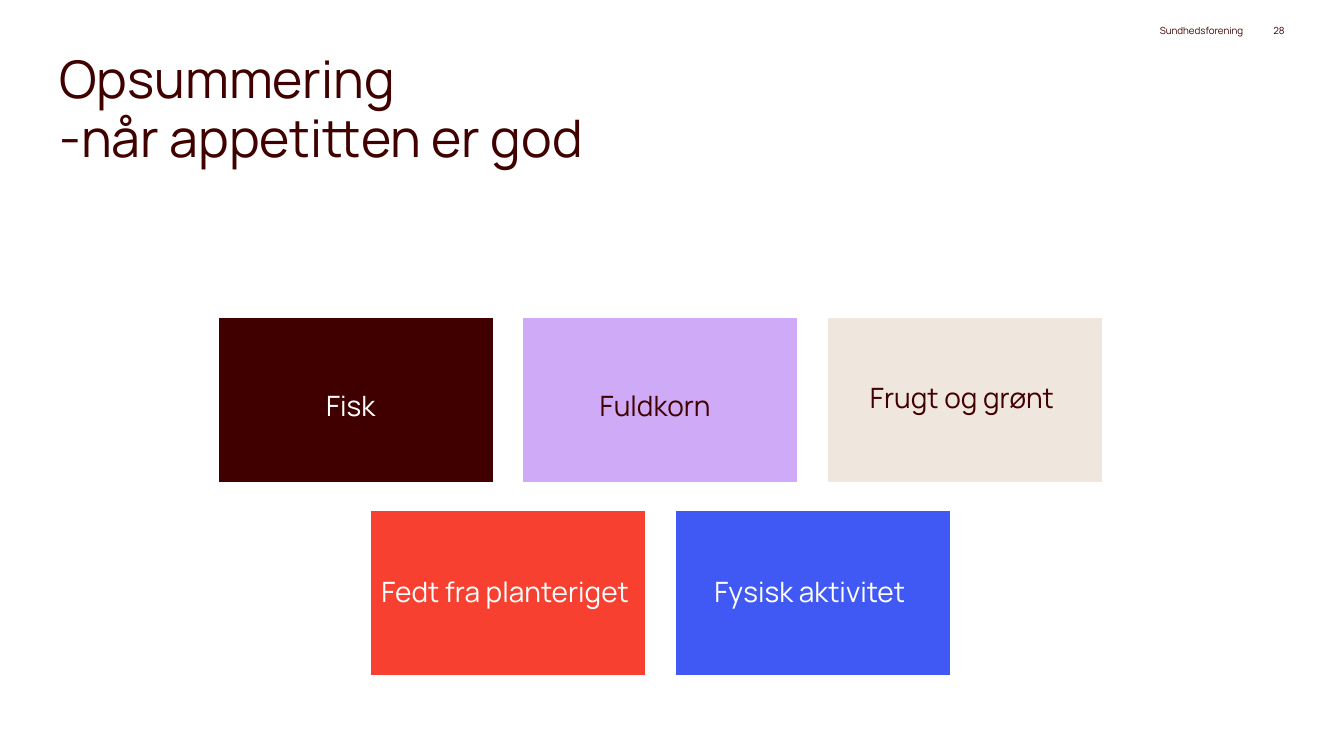
from pptx import Presentation
from pptx.dml.color import RGBColor
from pptx.enum.shapes import MSO_SHAPE as SHAPE
from pptx.enum.text import MSO_ANCHOR as ANCHOR, PP_ALIGN as ALIGN
from pptx.util import Emu, Pt

DARK, WHITE = "400000", "FFFFFF"


def px(n):
    """100 px to the inch."""
    return Emu(n * 9144)


def rgb(value):
    return RGBColor.from_string(value)


class Deck:
    font = "Manrope"

    def __init__(self, width, height):
        self.prs = Presentation()
        self.prs.slide_width, self.prs.slide_height = px(width), px(height)
        self.slide = self.prs.slides.add_slide(self.prs.slide_layouts[6])

    def fill_text(self, sp, lines, align, anchor, spacing=1.0, after=0, inset=0):
        """Each line is a list of (text, size, colour) runs."""
        tf = sp.text_frame
        tf.word_wrap = True
        tf.vertical_anchor = anchor
        tf.margin_left = tf.margin_right = px(inset)
        tf.margin_top = tf.margin_bottom = px(inset)
        p = tf.paragraphs[0]
        p.alignment, p.line_spacing, p.space_after = align, spacing, Pt(after)
        for i, runs in enumerate(lines):
            if i:
                p.add_line_break()
            for text, size, color in runs:
                r = p.add_run()
                r.text = text
                r.font.name, r.font.size = self.font, Pt(size)
                r.font.color.rgb = rgb(color)

    def text(self, x, y, w, h, lines, align=ALIGN.LEFT, anchor=ANCHOR.TOP, **style):
        sp = self.slide.shapes.add_textbox(px(x), px(y), px(w), px(h))
        self.fill_text(sp, lines, align, anchor, **style)

    def box(self, x, y, w, h, fill, runs):
        sp = self.slide.shapes.add_shape(SHAPE.RECTANGLE, px(x), px(y), px(w), px(h))
        sp.shadow.inherit = False
        sp.fill.solid()
        sp.fill.fore_color.rgb = rgb(fill)
        sp.line.color.rgb = rgb(WHITE)
        sp.line.width = Pt(1.5)
        self.fill_text(sp, [runs], ALIGN.CENTER, ANCHOR.MIDDLE,
                       spacing=0.9, after=7, inset=8)


def main():
    deck = Deck(1333, 750)

    # Title
    deck.text(59, 51, 596, 128,
              [[("Opsummering", 37, DARK)], [("-når appetitten er god", 37, DARK)]],
              spacing=0.95)

    # Header: organisation and page number
    for x, w, label in [(677, 556, "Sundhedsforening"), (1235, 39, "28")]:
        deck.text(x, 20, w, 20, [[(label, 7, DARK)]],
                  ALIGN.RIGHT, ANCHOR.MIDDLE, after=6)

    # Topic boxes: rows centred on a common axis
    rows = [
        [(DARK, [("Fisk", 20, WHITE), (" ", 37, WHITE)]),
         ("CFAAF6", [("Fuldkorn", 20, DARK), (" ", 37, WHITE)]),
         ("EFE6DD", [("Frugt og grønt ", 20, DARK)])],
        [("F74030", [("Fedt fra planteriget ", 20, WHITE)]),
         ("4058F4", [("Fysisk aktivitet ", 20, WHITE)])],
    ]
    center, top, w, h, gap = 655, 314, 274, 165, 28
    for i, row in enumerate(rows):
        left = center - (len(row) * (w + gap) - gap) // 2
        for j, (fill, runs) in enumerate(row):
            deck.box(left + j * (w + gap), top + i * (h + gap - 1), w, h, fill, runs)

    deck.prs.save("out.pptx")


if __name__ == "__main__":
    main()
